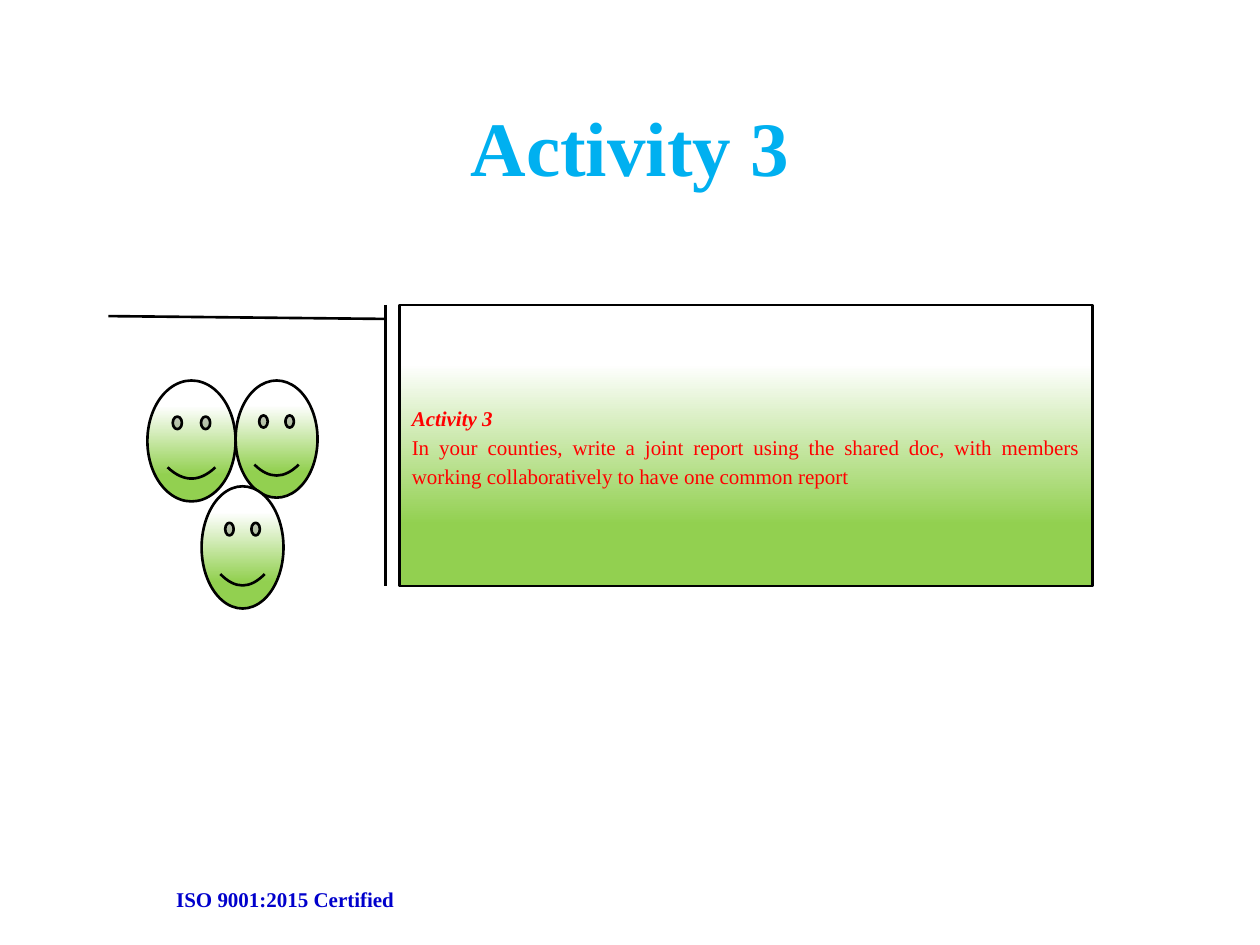
from pptx import Presentation
from pptx.dml.color import RGBColor
from pptx.enum.shapes import MSO_SHAPE as Shape
from pptx.enum.text import MSO_ANCHOR as Anchor, MSO_AUTO_SIZE as AutoSize, PP_ALIGN as Align
from pptx.util import Inches, Pt

COLUMNS, ROWS = 100, 75


def rgb(value):
    return RGBColor.from_string(value)


class SlideBuilder:
    """Style and current slide; boxes are (column, row, columns, rows)."""
    font = "Times New Roman"
    title_color, body_color, footer_color = "00B0F0", "FF0000", "0000CC"
    line_color = "000000"
    gradient = [(0.21, "FFFFFF"), (0.78, "92D050")]

    def __init__(self, deck):
        self.cell_width = deck.slide_width / COLUMNS
        self.cell_height = deck.slide_height / ROWS
        self.slide = deck.slides.add_slide(deck.slide_layouts[5])

    def place(self, box):
        """Turn grid units into slide lengths."""
        column, row, columns, rows = box
        return (round(column * self.cell_width), round(row * self.cell_height),
                round(columns * self.cell_width), round(rows * self.cell_height))

    def format_text(self, paragraph, size, color, bold=False, italic=False):
        for run in paragraph.runs:
            font = run.font
            font.name, font.size = self.font, Pt(size)
            font.bold, font.italic = bold, italic
            font.color.rgb = rgb(color)

    def title(self, text, box):
        title = self.slide.shapes.title
        title.left, title.top, title.width, title.height = self.place(box)
        frame = title.text_frame
        frame.text = text
        frame.vertical_anchor = Anchor.MIDDLE
        frame.paragraphs[0].alignment = Align.CENTER
        self.format_text(frame.paragraphs[0], 44, self.title_color, bold=True)

    def footer(self, text, box):
        frame = self.slide.shapes.add_textbox(*self.place(box)).text_frame
        frame.word_wrap = True
        frame.auto_size = AutoSize.SHAPE_TO_FIT_TEXT
        frame.text = text
        self.format_text(frame.paragraphs[0], 12, self.footer_color, bold=True)

    def group(self):
        return self.slide.shapes.add_group_shape()

    def gradient_shape(self, group, kind, box):
        shape = group.shapes.add_shape(kind, *self.place(box))
        shape.shadow.inherit = False
        shape.fill.gradient()
        shape.fill.gradient_angle = 270
        for stop, (position, color) in zip(shape.fill.gradient_stops, self.gradient):
            stop.position = position
            stop.color.rgb = rgb(color)
        shape.line.color.rgb = rgb(self.line_color)
        shape.line.width = Pt(1.5)
        return shape

    def callout(self, group, heading, task, box, pointer):
        callout = self.gradient_shape(group, Shape.LINE_CALLOUT_1_BORDER_AND_ACCENT_BAR, box)
        for index, share in enumerate(pointer):
            callout.adjustments[index] = share
        frame = callout.text_frame
        frame.word_wrap = True
        frame.vertical_anchor = Anchor.MIDDLE
        frame.text = f"{heading}\n{task}"
        for paragraph, is_heading in zip(frame.paragraphs, (True, False)):
            paragraph.alignment = Align.JUSTIFY
            paragraph.line_spacing = 1.15
            self.format_text(paragraph, 12, self.body_color, is_heading, is_heading)

    def face(self, group, box):
        self.gradient_shape(group, Shape.SMILEY_FACE, box)


def main():
    deck = Presentation()
    deck.slide_width, deck.slide_height = Inches(10), Inches(7.5)
    builder = SlideBuilder(deck)

    builder.title("Activity 3", (5, 5.3, 90, 12.5))
    activity = builder.group()
    builder.callout(
        activity, "Activity 3",
        "In your counties, write a joint report using the shared doc, "
        "with members working collaboratively to have one common report",
        box=(31.7, 24.2, 55, 22.3), pointer=(0.05, -0.02, 0.04, -0.42))
    for member in [(11.7, 30.2, 7, 9.6), (18.7, 30.2, 6.5, 9.3), (16, 38.6, 6.5, 9.7)]:
        builder.face(activity, member)
    builder.footer("ISO 9001:2015 Certified", (13, 69.9, 51.9, 3))

    deck.save("out.pptx")


if __name__ == "__main__":
    main()
